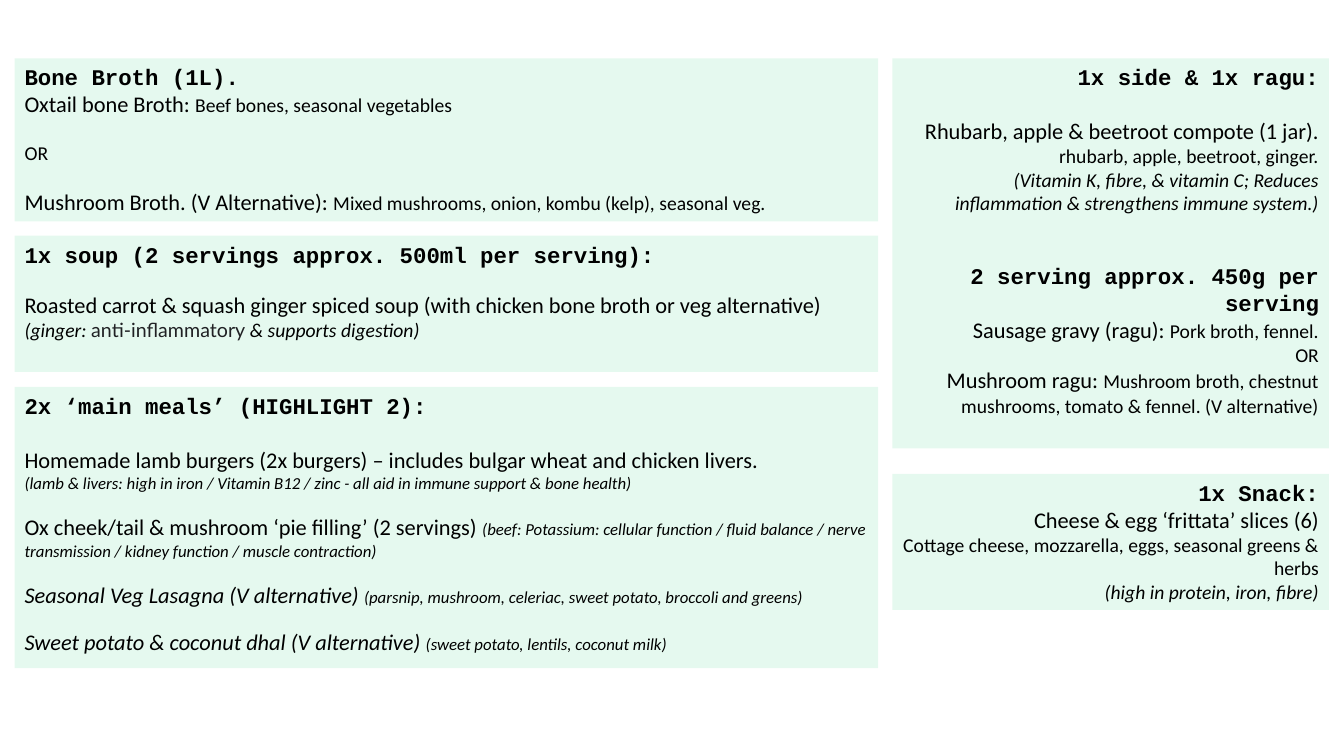
from lxml import etree
from pptx import Presentation
from pptx.dml.color import RGBColor
from pptx.enum.shapes import MSO_SHAPE
from pptx.enum.text import MSO_ANCHOR, PP_ALIGN
from pptx.oxml.ns import qn
from pptx.util import Cm, Pt

RECTANGLE = MSO_SHAPE.RECTANGLE
TOP = MSO_ANCHOR.TOP
LEFT, RIGHT = PP_ALIGN.LEFT, PP_ALIGN.RIGHT

COLORS = {"panel": "00CC66", "text": "000000", "accent": "202124"}
PANEL_OPACITY = 10
STYLES = {
    "heading": ("Courier New", 16, True, False, "text"),
    "dish": ("Calibri", 16, False, False, "text"),
    "dish_italic": ("Calibri", 16, False, True, "text"),
    "detail": ("Calibri", 14, False, False, "text"),
    "benefit": ("Calibri", 14, False, True, "text"),
    "benefit_accent": ("Lato", 14, False, False, "accent"),
    "small": ("Calibri", 12, False, True, "text"),
}
GAP_LARGE, GAP_MEDIUM, GAP_SMALL = 19.5, 17, 14.6

LEFT_X, LEFT_WIDTH = 0.37, 21.76
RIGHT_X, RIGHT_WIDTH = 22.49, 11

BROTH = [
    (0, [("Bone Broth (1L).", "heading")]),
    (0, [("Oxtail bone Broth: ", "dish"),
         ("Beef bones, seasonal vegetables", "detail")]),
    (GAP_MEDIUM, [("OR", "detail")]),
    (GAP_MEDIUM, [("Mushroom Broth. (V Alternative): ", "dish"),
                  ("Mixed mushrooms, onion, kombu (kelp), seasonal veg.", "detail")]),
]
SOUP = [
    (0, [("1x soup (2 servings approx. 500ml per serving):", "heading")]),
    (GAP_MEDIUM, [("Roasted carrot & squash ginger spiced soup "
                   "(with chicken bone broth or veg alternative)", "dish")]),
    (0, [("(ginger: ", "benefit"), ("anti-inflammatory", "benefit_accent"),
         (" & supports digestion)", "benefit")]),
]
MAINS = [
    (0, [("2x ‘main meals’ (HIGHLIGHT 2):", "heading")]),
    (GAP_LARGE, [("Homemade lamb burgers (2x burgers) – includes bulgar wheat "
                  "and chicken livers.", "dish")]),
    (0, [("(lamb & livers: high in iron / Vitamin B12 / zinc - all aid in "
          "immune support & bone health)", "small")]),
    (GAP_SMALL, [("Ox cheek/tail & mushroom ‘pie filling’ (2 servings) ", "dish"),
                 ("(beef: Potassium: cellular function / fluid balance / nerve "
                  "transmission / kidney function / muscle contraction)", "small")]),
    (GAP_SMALL, [("Seasonal Veg Lasagna (V alternative) ", "dish_italic"),
                 ("(parsnip, mushroom, celeriac, sweet potato, broccoli and greens)",
                  "small")]),
    (GAP_SMALL, [("Sweet potato & coconut dhal (V alternative) ", "dish_italic"),
                 ("(sweet potato, lentils, coconut milk)", "small")]),
]
SIDES = [
    (0, [("1x side & 1x ragu:", "heading")]),
    (GAP_LARGE, [("Rhubarb, apple & beetroot compote (1 jar).", "dish")]),
    (0, [("rhubarb, apple, beetroot, ginger.", "detail")]),
    (0, [("(Vitamin K, fibre, & vitamin C; Reduces inflammation & strengthens "
          "immune system.)", "benefit")]),
    (2 * GAP_MEDIUM, [("2 serving approx. 450g per serving", "heading")]),
    (0, [("Sausage gravy (ragu): ", "dish"), ("Pork broth, fennel.", "detail")]),
    (0, [("OR", "detail")]),
    (0, [("Mushroom ragu: ", "dish"),
         ("Mushroom broth, chestnut mushrooms, tomato & fennel. (V alternative)",
          "detail")]),
]
SNACK = [
    (0, [("1x Snack:", "heading")]),
    (0, [("Cheese & egg ‘frittata’ slices (6)", "dish")]),
    (0, [("Cottage cheese, mozzarella, eggs, seasonal greens & herbs", "detail")]),
    (0, [("(high in protein, iron, fibre)", "benefit")]),
]


class MenuSlide:
    """Draws menu panels in one shared style on the current slide."""

    def __init__(self, slide):
        self.slide = slide

    def panel(self, left, top, width, height, lines, align):
        panel = self.slide.shapes.add_shape(
            RECTANGLE, Cm(left), Cm(top), Cm(width), Cm(height))
        panel.shadow.inherit = False
        panel.line.fill.background()
        panel.fill.solid()
        panel.fill.fore_color.rgb = RGBColor.from_string(COLORS["panel"])
        tint = panel.fill._xPr.find(qn("a:solidFill"))[0]
        etree.SubElement(tint, qn("a:alpha")).set("val", str(PANEL_OPACITY * 1000))
        frame = panel.text_frame
        frame.word_wrap = True
        frame.vertical_anchor = TOP
        for index, (gap, runs) in enumerate(lines):
            paragraph = frame.add_paragraph() if index else frame.paragraphs[0]
            paragraph.alignment = align
            paragraph.space_before = Pt(gap)
            for text, style in runs:
                self.run(paragraph, text, style)

    def run(self, paragraph, text, style):
        run = paragraph.add_run()
        run.text = text
        font = run.font
        font.name, size, font.bold, font.italic, color = STYLES[style]
        font.size = Pt(size)
        font.color.rgb = RGBColor.from_string(COLORS[color])


def main():
    deck = Presentation()
    deck.slide_width, deck.slide_height = Cm(33.87), Cm(19.05)
    menu = MenuSlide(deck.slides.add_slide(deck.slide_layouts[6]))
    for top, height, lines in [(1.47, 4.11, BROTH), (5.94, 3.43, SOUP),
                               (9.75, 7.09, MAINS)]:
        menu.panel(LEFT_X, top, LEFT_WIDTH, height, lines, LEFT)
    for top, height, lines in [(1.47, 9.83, SIDES), (11.94, 3.43, SNACK)]:
        menu.panel(RIGHT_X, top, RIGHT_WIDTH, height, lines, RIGHT)
    deck.save("out.pptx")


if __name__ == "__main__":
    main()
